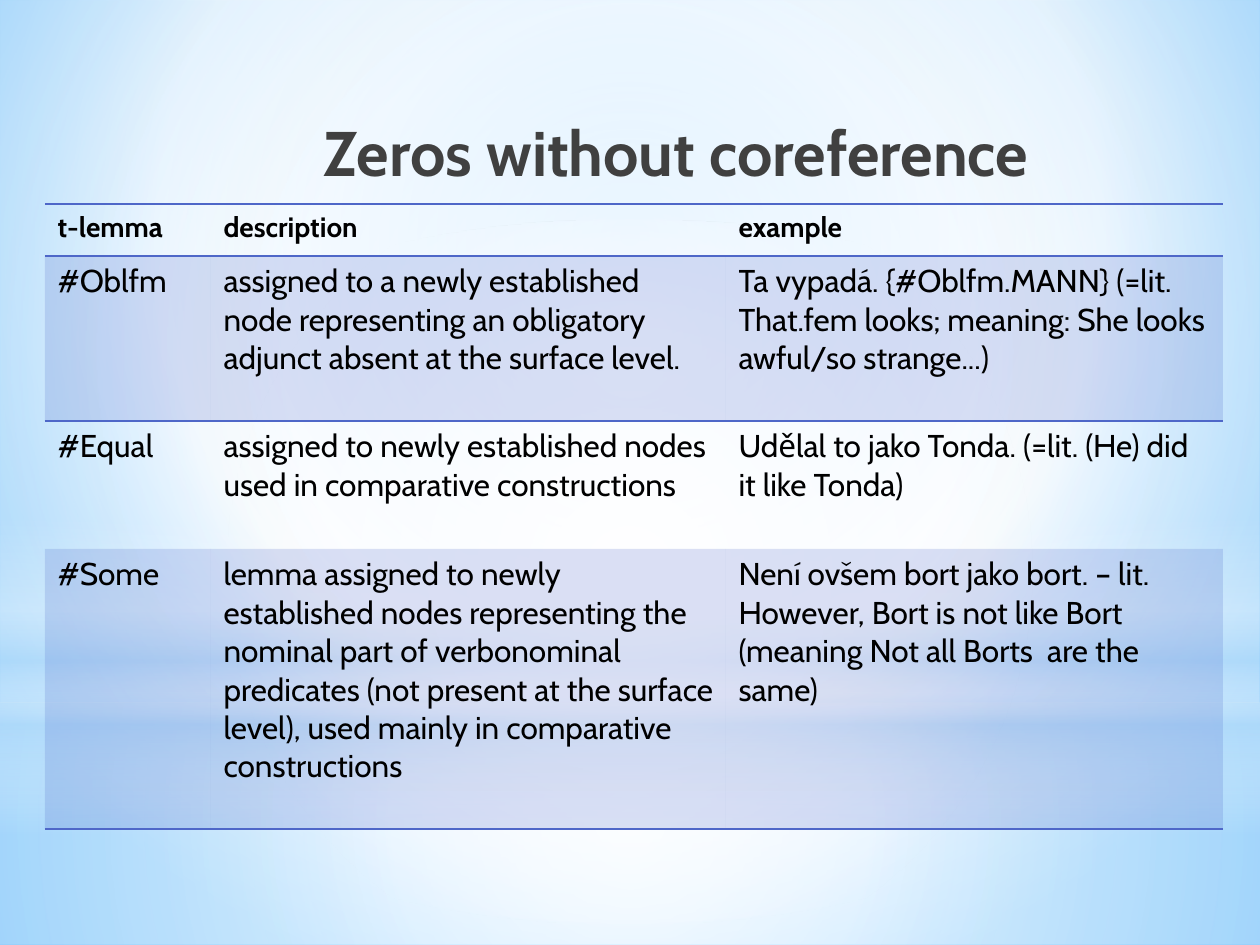
from lxml.etree import SubElement
from pptx import Presentation
from pptx.dml.color import RGBColor
from pptx.enum.shapes import MSO_SHAPE
from pptx.enum.text import MSO_ANCHOR, PP_ALIGN
from pptx.oxml.ns import qn
from pptx.util import Pt

PX = 914400 / 126
COLORS = {
    "sky": "9ED5FF", "deep_sky": "5BB9FF", "haze": "B4DCFA",
    "white": "FFFFFF", "rule": "4E67C8", "ink": "000000", "title": "404040",
}
PLAIN_TABLE = "{2D5ABB26-0587-4C30-8999-92F81FD0307C}"
CENTER = (50, 50, 50, 50)


def emu(px):
    return round(px * PX)


def add_color(parent, color, alpha=100):
    node = SubElement(parent, qn("a:srgbClr"), val=COLORS[color])
    if alpha < 100:
        SubElement(node, qn("a:alpha"), val=str(alpha * 1000))


def set_gradient(fill_parent, stops, focus=None):
    solid = fill_parent.find(qn("a:solidFill"))
    gradient = SubElement(fill_parent, qn("a:gradFill"), rotWithShape="1")
    fill_parent.replace(solid, gradient)
    stop_list = SubElement(gradient, qn("a:gsLst"))
    for position, color, alpha in stops:
        stop = SubElement(stop_list, qn("a:gs"), pos=str(position * 1000))
        add_color(stop, color, alpha)
    if focus:
        path = SubElement(gradient, qn("a:path"), path="circle")
        sides = {side: str(value * 1000) for side, value in zip("ltrb", focus)}
        SubElement(path, qn("a:fillToRect"), **sides)
    else:
        SubElement(gradient, qn("a:lin"), ang="5400000", scaled="0")


def write_text(frame, text, *, size, font="Cabin", color="ink", bold=False,
               align=PP_ALIGN.LEFT):
    frame.word_wrap = True
    paragraph = frame.paragraphs[0]
    paragraph.alignment = align
    run = paragraph.add_run()
    run.text = text
    run.font.name = font
    run.font.size = Pt(size)
    run.font.bold = bold
    run.font.color.rgb = RGBColor.from_string(COLORS[color])


class SlideBuilder:
    def __init__(self, slide):
        self.slide = slide
        self.title_size = 36
        self.header_size = 16
        self.body_size = 18
        self.tint = 20

    def background(self, stops, focus):
        self.slide.background.fill.solid()
        properties = self.slide.element.find(".//" + qn("p:bgPr"))
        set_gradient(properties, stops, focus)

    def glow(self, kind, box, stops, focus=None):
        glow = self.slide.shapes.add_shape(kind, *map(emu, box))
        glow.shadow.inherit = False
        glow.line.fill.background()
        glow.fill.solid()
        set_gradient(glow.element.spPr, stops, focus)

    def title(self, text, box):
        title = self.slide.shapes.add_textbox(*map(emu, box))
        title.text_frame.vertical_anchor = MSO_ANCHOR.TOP
        write_text(title.text_frame, text, size=self.title_size, bold=True,
                   color="title", align=PP_ALIGN.RIGHT)

    def table(self, rows, left, top, widths, heights):
        frame = self.slide.shapes.add_table(
            len(rows), len(widths), emu(left), emu(top),
            emu(sum(widths)), emu(sum(heights)))
        table = frame.table
        table.first_row = table.horz_banding = False
        frame.element.find(".//" + qn("a:tableStyleId")).text = PLAIN_TABLE
        for column, width in zip(table.columns, widths):
            column.width = emu(width)
        for row, height in zip(table.rows, heights):
            row.height = emu(height)
        for r, row in enumerate(rows):
            header = r == 0
            edges = {0: ("lnT", "lnB"), 1: ("lnT",), len(rows) - 1: ("lnB",)}
            for c, text in enumerate(row):
                cell = table.cell(r, c)
                write_text(cell.text_frame, text, bold=header,
                           size=self.header_size if header else self.body_size)
                self.style_cell(cell, edges.get(r, ()), r % 2 == 1)

    def style_cell(self, cell, edges, tinted):
        properties = cell._tc.get_or_add_tcPr()
        for edge in edges:
            line = SubElement(properties, qn("a:" + edge), w=str(Pt(1)))
            add_color(SubElement(line, qn("a:solidFill")), "rule")
        if tinted:
            add_color(SubElement(properties, qn("a:solidFill")), "rule", self.tint)
        else:
            cell.fill.background()


def main():
    prs = Presentation()
    prs.slide_width, prs.slide_height = emu(1260), emu(945)
    builder = SlideBuilder(prs.slides.add_slide(prs.slide_layouts[6]))

    builder.background(
        [(0, "sky", 100), (60, "white", 100), (100, "deep_sky", 100)],
        (20, 10, 20, 60))
    builder.glow(MSO_SHAPE.RECTANGLE, (0, 703, 1260, 242),
                 [(0, "white", 91), (37, "white", 76), (100, "haze", 79)], CENTER)
    builder.glow(MSO_SHAPE.RECTANGLE, (0, 0, 1260, 703),
                 [(0, "white", 89), (48, "white", 62), (100, "haze", 79)], CENTER)
    builder.glow(MSO_SHAPE.RECTANGLE, (0, 519, 1260, 315),
                 [(0, "white", 0), (29, "white", 30), (45, "haze", 40),
                  (55, "white", 26), (65, "haze", 60), (100, "white", 0)])
    builder.glow(MSO_SHAPE.OVAL, (0, 220, 1260, 703),
                 [(0, "white", 100), (56, "white", 0)], CENTER)

    zeros = [
        ("t-lemma", "description", "example"),
        ("#Oblfm",
         "assigned to a newly established node representing an obligatory "
         "adjunct absent at the surface level.",
         "Ta vypadá. {#Oblfm.MANN} (=lit. That.fem looks; meaning: She looks "
         "awful/so strange...)"),
        ("#Equal",
         "assigned to newly established nodes used in comparative constructions",
         "Udělal to jako Tonda. (=lit. (He) did it like Tonda)"),
        ("#Some",
         "lemma assigned to newly established nodes representing the nominal "
         "part of verbonominal predicates (not present at the surface level), "
         "used mainly in comparative constructions",
         "Není ovšem bort jako bort. – lit. However, Bort is not like Bort "
         "(meaning Not all Borts  are the same)"),
    ]
    builder.table(zeros, 45, 204, (166, 515, 497), (52, 165, 128, 280))
    builder.title("Zeros without coreference", (144, 107, 897, 158))
    prs.save("out.pptx")


if __name__ == "__main__":
    main()
